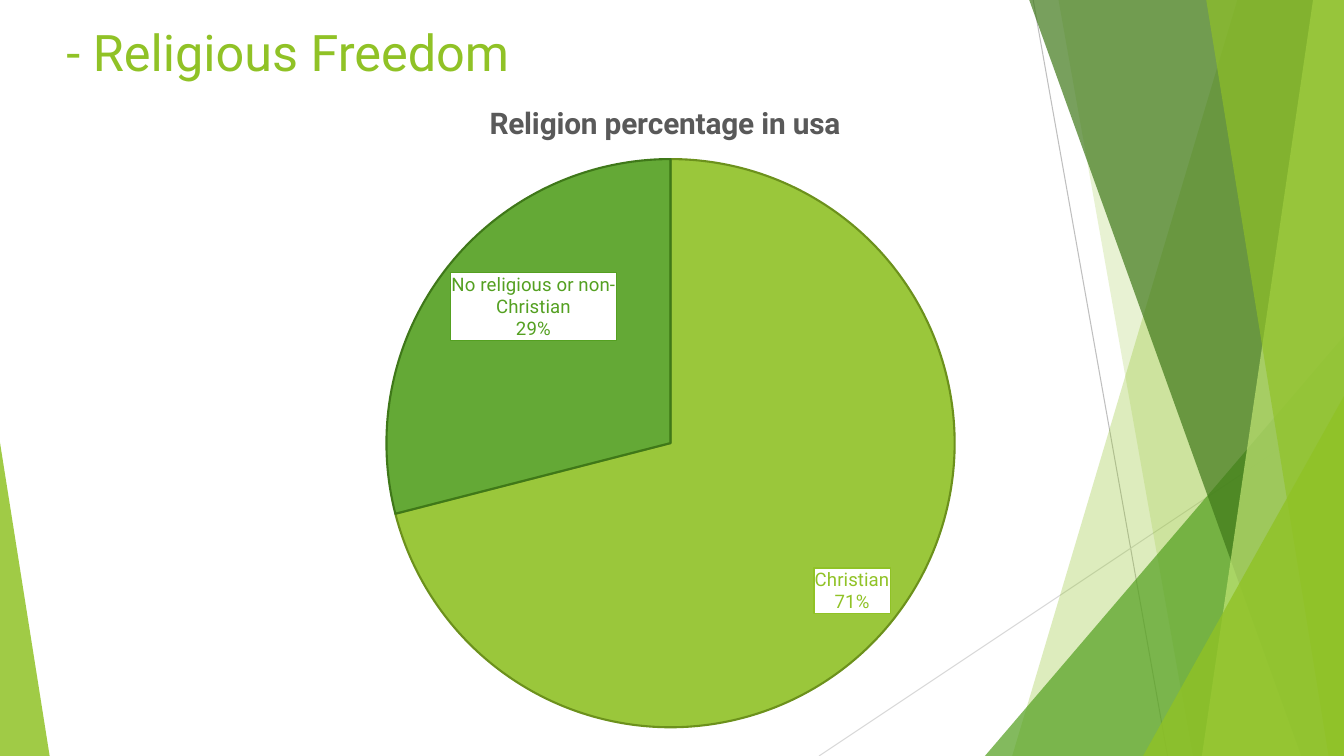
from lxml import etree
from pptx import Presentation
from pptx import util as u
from pptx.chart import data as cd
from pptx.dml import color as col
from pptx.enum import chart as ec, shapes as es, text as et
from pptx.oxml import ns, parse_xml

Pt = u.Pt
RGB = col.RGBColor
WIDE, HIGH = 960, 540
FONT = "Roboto"
LIME = RGB(0x90, 0xC2, 0x26)
GREEN = RGB(0x54, 0xA0, 0x21)
MOSS = RGB(0x3F, 0x78, 0x19)
PALE = RGB(0xC0, 0xE4, 0x74)
OLIVE = RGB(0x6C, 0x91, 0x1C)
GRAY = RGB(0xBF, 0xBF, 0xBF)
SILVER = RGB(0xD9, 0xD9, 0xD9)
DARK = RGB(0x59, 0x59, 0x59)


def fade(clr, share):
    node = etree.SubElement(clr, ns.qn("a:alpha"))
    node.set("val", str(share * 1000))


def paint(shape, color, share):
    shape.shadow.inherit = False
    shape.fill.solid()
    shape.fill.fore_color.rgb = color
    shape.line.fill.background()
    fade(shape._element.spPr.xpath("./a:solidFill/a:srgbClr")[0], share)


def style(font, size, color, bold=False):
    font.name, font.size, font.bold = FONT, Pt(size), bold
    font.color.rgb = color


def add_line(slide, x1, y1, x2, y2, color):
    line = slide.shapes.add_connector(
        es.MSO_CONNECTOR.STRAIGHT, Pt(x1), Pt(y1), Pt(x2), Pt(y2))
    line.line.color.rgb = color
    line.line.width = Pt(0.75)
    etree.SubElement(line._element.spPr, ns.qn("a:effectLst"))


def add_band(slide, right, base, top, foot, color, share):
    form = slide.shapes.build_freeform(Pt(top), Pt(-0.6), 1.0)
    form.add_line_segments(
        [(Pt(right), Pt(-0.6)), (Pt(right), Pt(base)), (Pt(foot), Pt(base))])
    paint(form.convert_to_shape(), color, share)


def add_peak(slide, left, top, wide, base, tip, color, share):
    peak = slide.shapes.add_shape(
        es.MSO_SHAPE.ISOSCELES_TRIANGLE,
        Pt(left), Pt(top), Pt(wide), Pt(base - top))
    peak.adjustments[0] = tip
    paint(peak, color, share)


def add_decor(slide, right, base):
    add_line(slide, right - 222, 0, right - 126, base, GRAY)
    add_line(slide, right, base - 250, right - 375, base, SILVER)
    add_band(slide, right, base, right - 76, right - 237, LIME, 30)
    add_band(slide, right, base, right - 204, right - 108, LIME, 20)
    add_peak(slide, right - 256.5, base - 300, 256.5, base, 1, GREEN, 72)
    add_band(slide, right, base, right - 225, right - 30.5, MOSS, 70)
    add_band(slide, right, base, right - 22, right - 101.5, PALE, 70)
    add_band(slide, right, base, right - 98.5, right - 11, LIME, 65)
    add_peak(slide, right - 143.5, base - 257, 143.5, base, 1, LIME, 80)
    add_peak(slide, 0, base - 224, 35.5, base, 0, LIME, 85)


def add_title(slide, left, top, wide, high):
    box = slide.shapes.add_textbox(Pt(left), Pt(top), Pt(wide), Pt(high))
    frame = box.text_frame
    frame.word_wrap = True
    frame.vertical_anchor = et.MSO_ANCHOR.BOTTOM
    frame.margin_left = frame.margin_right = Pt(9.4)
    frame.margin_top = frame.margin_bottom = Pt(9.4)
    frame.text = "- Religious Freedom"
    style(frame.paragraphs[0].runs[0].font, 36, LIME)


def show_parts(labels):
    labels.show_value = False
    labels.show_category_name = True
    labels.show_percentage = True
    labels.position = ec.XL_LABEL_POSITION.INSIDE_END
    style(labels.font, 13.3, LIME)


def box_label(label, color):
    label.find(ns.qn("c:txPr")).addprevious(parse_xml(
        f'<c:spPr {ns.nsdecls("c", "a")}><a:solidFill><a:srgbClr val="FFFFFF"/>'
        f'</a:solidFill><a:ln w="12700"><a:solidFill><a:srgbClr val="{color}"/>'
        '</a:solidFill></a:ln></c:spPr>'))
    for tag, flag in (("showVal", "0"), ("showCatName", "1"), ("showPercent", "1")):
        label.find(ns.qn("c:" + tag)).set("val", flag)
    etree.SubElement(label, ns.qn("c:separator")).text = "\n"


def place_plot(chart, x, y, wide, high):
    area = chart._chartSpace.chart.plotArea
    for old in area.findall(ns.qn("c:layout")):
        area.remove(old)
    parts = "".join(f'<c:{k} val="{v}"/>' for k, v in (
        ("layoutTarget", "inner"), ("xMode", "edge"), ("yMode", "edge"),
        ("x", x), ("y", y), ("w", wide), ("h", high)))
    area.insert(0, parse_xml(
        f'<c:layout {ns.nsdecls("c")}><c:manualLayout>{parts}'
        '</c:manualLayout></c:layout>'))


def add_pie(slide, left, top, wide, high):
    data = cd.CategoryChartData()
    data.categories = ["Christian", "No religious or non-Christian"]
    data.add_series("Series 1", [71, 29])
    chart = slide.shapes.add_chart(
        ec.XL_CHART_TYPE.PIE, Pt(left), Pt(top), Pt(wide), Pt(high), data).chart
    style(chart.font, 10, RGB(0, 0, 0))
    chart.has_legend = False
    chart.has_title = True
    head = chart.chart_title.text_frame
    head.text = "Religion percentage in usa"
    style(head.paragraphs[0].runs[0].font, 21.3, DARK, True)
    plot = chart.plots[0]
    plot.vary_by_categories = True
    series = plot.series[0]
    show_parts(series.data_labels)
    tones = ((LIME, OLIVE), (GREEN, MOSS))
    for i, (tone, edge) in enumerate(tones):
        point = series.points[i]
        point.format.fill.solid()
        point.format.fill.fore_color.rgb = tone
        point.format.line.color.rgb = edge
        point.format.line.width = Pt(1.5)
        style(point.data_label.font, 13.3, tone)
        point.data_label.position = ec.XL_LABEL_POSITION.INSIDE_END
    root = chart._chartSpace
    for clr in root.xpath(".//c:dPt/c:spPr/a:solidFill/a:srgbClr"):
        fade(clr, 90)
    for label, (tone, edge) in zip(root.xpath(".//c:dLbl"), tones):
        box_label(label, tone)
    place_plot(chart, 0.25, 0.12, 0.51, 0.86)


def main():
    deck = Presentation()
    deck.slide_width, deck.slide_height = Pt(WIDE), Pt(HIGH)
    slide = deck.slides.add_slide(deck.slide_layouts[6])
    add_decor(slide, WIDE, HIGH)
    add_title(slide, 38, -8, 750, 75.6)
    add_pie(slide, 75, 57, 800, 472)
    deck.save("out.pptx")


if __name__ == "__main__":
    main()
